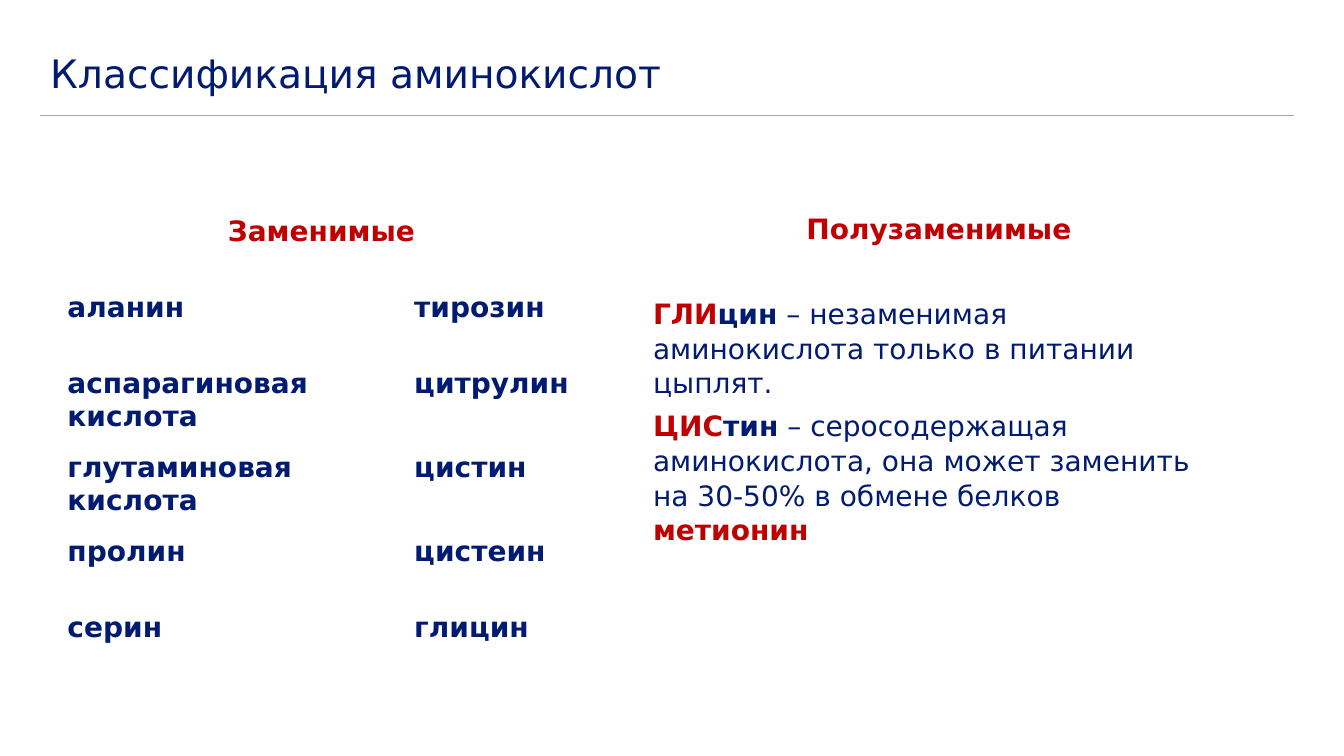
from dataclasses import dataclass

from lxml.etree import SubElement
from pptx import Presentation
from pptx.dml.color import RGBColor
from pptx.enum.shapes import MSO_CONNECTOR
from pptx.enum.text import MSO_ANCHOR, PP_ALIGN
from pptx.oxml.ns import qn
from pptx.slide import Slide
from pptx.text.text import TextFrame, _Paragraph
from pptx.util import Pt


@dataclass(frozen=True)
class Theme:
    font: str = "DejaVu Sans"
    navy: RGBColor = RGBColor(0x00, 0x1B, 0x71)
    red: RGBColor = RGBColor(0xC0, 0x00, 0x00)
    rule: RGBColor = RGBColor(0xA6, 0xA6, 0xA6)
    white: RGBColor = RGBColor(0xFF, 0xFF, 0xFF)
    title_size: float = 28
    text_size: float = 20


@dataclass(frozen=True)
class Piece:
    text: str
    color: RGBColor
    bold: bool = True
    size: float = Theme.text_size


@dataclass(frozen=True)
class Box:
    left: float
    top: float
    width: float
    height: float


@dataclass(frozen=True)
class AcidRow:
    first: str
    second: str
    height: float


THEME = Theme()
TITLE_BOX = Box(28.8, 32.4, 895.7, 43.2)
TABLE_BOX = Box(41, 150.5, 377.3, 337.2)
SEMI_BOX = Box(459.4, 146.9, 422.6, 320.4)
RULE_TOP = 82.3
COLUMN_WIDTHS = (247.7, 129.6)
SHORT_ROW, TALL_ROW = 54.3, 60

ACID_ROWS = (
    AcidRow("аланин", "тирозин", SHORT_ROW),
    AcidRow("аспарагиновая кислота", "цитрулин", TALL_ROW),
    AcidRow("глутаминовая кислота", "цистин", TALL_ROW),
    AcidRow("пролин", "цистеин", SHORT_ROW),
    AcidRow("серин", "глицин", SHORT_ROW),
)
SEMI_PARAGRAPHS = (
    (Piece("Полузаменимые", THEME.red),),
    (
        Piece("ГЛИ", THEME.red),
        Piece("цин", THEME.navy),
        Piece(" – незаменимая аминокислота только в питании цыплят.", THEME.navy, False),
    ),
    (
        Piece("ЦИС", THEME.red),
        Piece("тин", THEME.navy),
        Piece(
            " – серосодержащая аминокислота, она может заменить на 30-50% в обмене белков ",
            THEME.navy,
            False,
        ),
        Piece("метионин", THEME.red),
    ),
)


def write_pieces(paragraph: _Paragraph, *pieces: Piece) -> None:
    """Append formatted runs to a paragraph."""
    for piece in pieces:
        run = paragraph.add_run()
        run.text = piece.text
        run.font.name = THEME.font
        run.font.size = Pt(piece.size)
        run.font.bold = piece.bold
        run.font.color.rgb = piece.color


def add_text_frame(slide: Slide, box: Box) -> TextFrame:
    """Add a white wrapping text box and return its text frame."""
    shape = slide.shapes.add_textbox(Pt(box.left), Pt(box.top), Pt(box.width), Pt(box.height))
    shape.fill.solid()
    shape.fill.fore_color.rgb = THEME.white
    shape.text_frame.word_wrap = True
    return shape.text_frame


def add_title(slide: Slide) -> None:
    """Add the slide title and the rule beneath it."""
    text_frame = add_text_frame(slide, TITLE_BOX)
    text_frame.vertical_anchor = MSO_ANCHOR.MIDDLE
    paragraph = text_frame.paragraphs[0]
    paragraph.line_spacing = 0.9
    write_pieces(
        paragraph, Piece("Классификация аминокислот", THEME.navy, False, THEME.title_size)
    )
    right = TITLE_BOX.left + TITLE_BOX.width
    rule = slide.shapes.add_connector(
        MSO_CONNECTOR.STRAIGHT, Pt(TITLE_BOX.left), Pt(RULE_TOP), Pt(right), Pt(RULE_TOP)
    )
    rule.line.color.rgb = THEME.rule
    rule.line.width = Pt(1)
    SubElement(rule._element.spPr, qn("a:effectLst"))


def add_acid_table(slide: Slide) -> None:
    """Add the table of replaceable amino acids."""
    box = TABLE_BOX
    table = slide.shapes.add_table(
        len(ACID_ROWS) + 1, 2, Pt(box.left), Pt(box.top), Pt(box.width), Pt(box.height)
    ).table
    table.first_row = False
    table.horz_banding = False
    for column, width in zip(table.columns, COLUMN_WIDTHS):
        column.width = Pt(width)
    for cell in table.iter_cells():
        cell.fill.background()

    table.rows[0].height = Pt(SHORT_ROW)
    heading = table.cell(0, 0)
    heading.merge(table.cell(0, 1))
    paragraph = heading.text_frame.paragraphs[0]
    paragraph.alignment = PP_ALIGN.CENTER
    write_pieces(paragraph, Piece("Заменимые", THEME.red))

    for row_index, acid_row in enumerate(ACID_ROWS, start=1):
        table.rows[row_index].height = Pt(acid_row.height)
        for column_index, name in enumerate((acid_row.first, acid_row.second)):
            cell = table.cell(row_index, column_index)
            write_pieces(cell.text_frame.paragraphs[0], Piece(name, THEME.navy))


def add_semi_replaceable(slide: Slide) -> None:
    """Add the notes on semi-replaceable amino acids."""
    text_frame = add_text_frame(slide, SEMI_BOX)
    for index, pieces in enumerate(SEMI_PARAGRAPHS):
        paragraph = text_frame.add_paragraph() if index else text_frame.paragraphs[0]
        paragraph.alignment = PP_ALIGN.LEFT if index else PP_ALIGN.CENTER
        paragraph.line_spacing = 1.03
        paragraph.space_after = Pt(6 if index else 36)
        write_pieces(paragraph, *pieces)


def main() -> None:
    """Build and save the amino acid slide."""
    presentation = Presentation()
    presentation.slide_width = Pt(960)
    presentation.slide_height = Pt(540)
    slide = presentation.slides.add_slide(presentation.slide_layouts[6])
    add_title(slide)
    add_acid_table(slide)
    add_semi_replaceable(slide)
    presentation.save("out.pptx")


if __name__ == "__main__":
    main()
